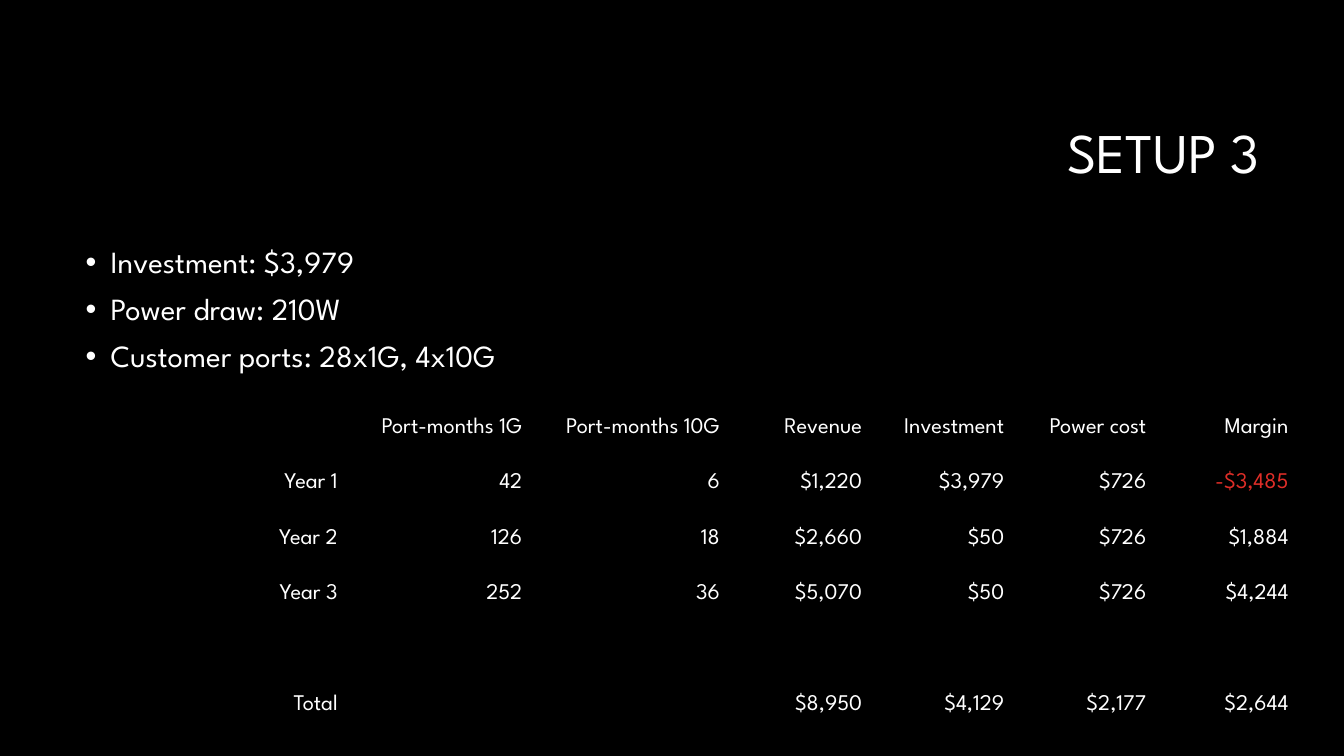
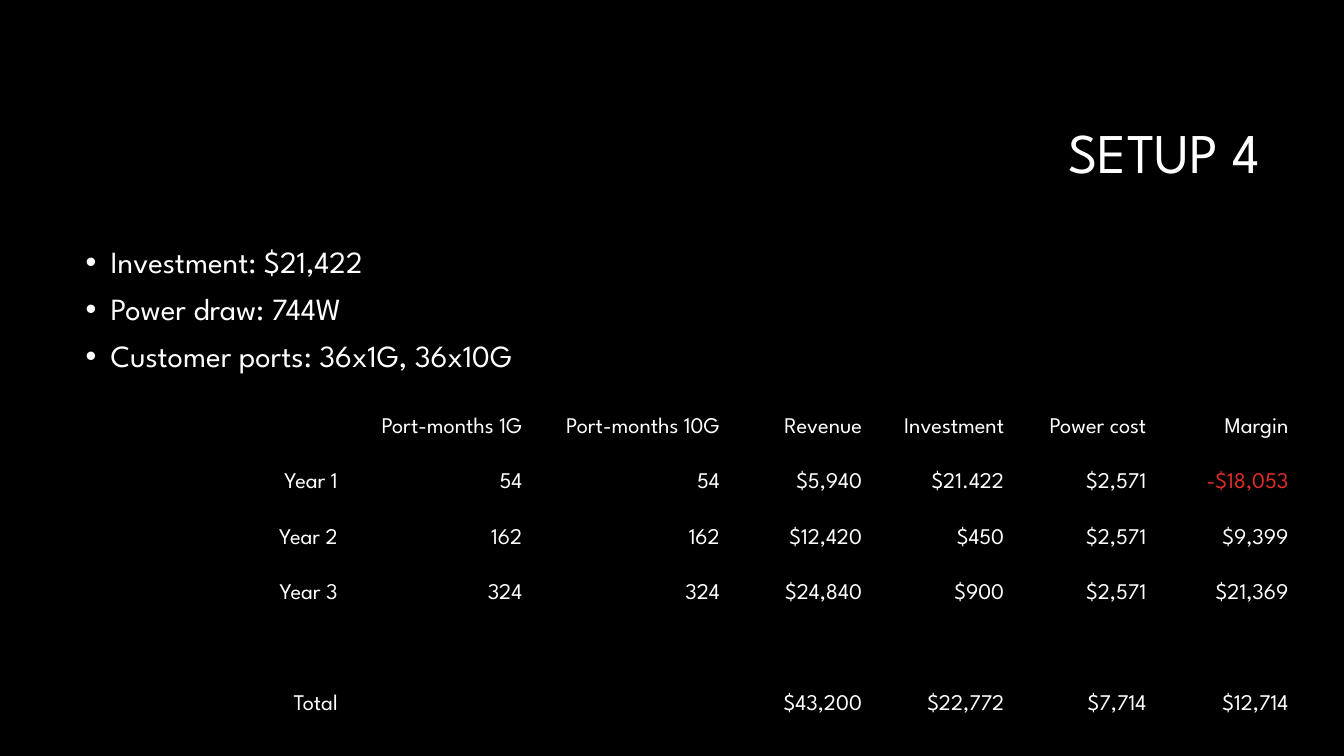
"""Build two slides comparing the finances of network setups 3 and 4."""
from lxml.etree import SubElement
from pptx import Presentation
from pptx.dml.color import RGBColor
from pptx.enum.text import MSO_ANCHOR, PP_ALIGN
from pptx.oxml.ns import qn
from pptx.util import Inches, Pt

BLACK = RGBColor(0x00, 0x00, 0x00)
WHITE = RGBColor(0xFF, 0xFF, 0xFF)
RED = RGBColor(0xDF, 0x2E, 0x28)
FONT = "League Spartan"
PLAIN_TABLE_STYLE = "{2D5ABB26-0587-4C30-8999-92F81FD0307C}"

COLUMN_WIDTHS = [1.93, 1.83, 1.96, 1.41, 1.41, 1.41, 1.41]
ROW_HEIGHTS = [1.02] + [0.55] * 5
HEADINGS = ["", "Port-months 1G", "Port-months 10G", "Revenue",
            "Investment", "Power cost", "Margin"]

SETUPS = [
    {
        "title": "SETUP 3",
        "facts": ["Investment: $3,979", "Power draw: 210W",
                  "Customer ports: 28x1G, 4x10G"],
        "years": [
            ["Year 1", "42", "6", "$1,220", "$3,979", "$726", "-$3,485"],
            ["Year 2", "126", "18", "$2,660", "$50", "$726", "$1,884"],
            ["Year 3", "252", "36", "$5,070", "$50", "$726", "$4,244"],
        ],
        "total": ["Total", "", "", "$8,950", "$4,129", "$2,177", "$2,644"],
    },
    {
        "title": "SETUP 4",
        "facts": ["Investment: $21,422", "Power draw: 744W",
                  "Customer ports: 36x1G, 36x10G"],
        "years": [
            ["Year 1", "54", "54", "$5,940", "$21.422", "$2,571", "-$18,053"],
            ["Year 2", "162", "162", "$12,420", "$450", "$2,571", "$9,399"],
            ["Year 3", "324", "324", "$24,840", "$900", "$2,571", "$21,369"],
        ],
        "total": ["Total", "", "", "$43,200", "$22,772", "$7,714", "$12,714"],
    },
]


def format_runs(paragraph, size, color=WHITE):
    """Apply the shared typeface with a size and colour."""
    for run in paragraph.runs:
        run.font.name = FONT
        run.font.size = Pt(size)
        run.font.color.rgb = color


def add_text_frame(slide, left, top, width, height):
    """Add a wrapping text box and return its text frame."""
    shape = slide.shapes.add_textbox(
        Inches(left), Inches(top), Inches(width), Inches(height))
    shape.text_frame.word_wrap = True
    return shape.text_frame


def add_title(slide, title):
    """Add the right-aligned slide title."""
    text_frame = add_text_frame(slide, 3.17, 0.84, 9.42, 1.41)
    text_frame.vertical_anchor = MSO_ANCHOR.MIDDLE
    text_frame.text = title
    paragraph = text_frame.paragraphs[0]
    paragraph.alignment = PP_ALIGN.RIGHT
    paragraph.line_spacing = 0.9
    format_runs(paragraph, 40)


def add_bullet(paragraph):
    """Give a paragraph a round bullet with a hanging indent."""
    properties = paragraph._p.get_or_add_pPr()
    properties.set("marL", str(Inches(0.25)))
    properties.set("indent", str(Inches(-0.25)))
    SubElement(properties, qn("a:buFont")).set("typeface", "Arial")
    SubElement(properties, qn("a:buChar")).set("char", "•")


def add_facts(slide, facts):
    """Add the bulleted key facts."""
    text_frame = add_text_frame(slide, 0.75, 2.4, 11.83, 1.59)
    text_frame.text = "\n".join(facts)
    for index, paragraph in enumerate(text_frame.paragraphs):
        add_bullet(paragraph)
        paragraph.line_spacing = 0.9
        if index:
            paragraph.space_before = Pt(10)
        format_runs(paragraph, 22)


def fill_cell(cell, text):
    """Write one right-aligned cell, with negative amounts in red."""
    cell.fill.background()
    cell.vertical_anchor = MSO_ANCHOR.BOTTOM
    cell.margin_left = cell.margin_right = cell.margin_top = Inches(0.01)
    cell.margin_bottom = 0
    cell.text_frame.text = text
    paragraph = cell.text_frame.paragraphs[0]
    paragraph.alignment = PP_ALIGN.RIGHT
    format_runs(paragraph, 16, RED if text.startswith("-") else WHITE)


def add_finance_table(slide, rows):
    """Add the yearly finance table without bands or borders."""
    frame = slide.shapes.add_table(
        len(rows), len(COLUMN_WIDTHS), Inches(1.43), Inches(3.33),
        Inches(sum(COLUMN_WIDTHS)), Inches(sum(ROW_HEIGHTS)))
    table = frame.table
    table.first_row = table.horz_banding = False
    for style in table._tbl.iter(qn("a:tableStyleId")):
        style.text = PLAIN_TABLE_STYLE
    for column, width in zip(table.columns, COLUMN_WIDTHS):
        column.width = Inches(width)
    for table_row, height, texts in zip(table.rows, ROW_HEIGHTS, rows):
        table_row.height = Inches(height)
        for cell, text in zip(table_row.cells, texts):
            fill_cell(cell, text)


def add_setup_slide(presentation, setup):
    """Add one black slide that describes a setup."""
    slide = presentation.slides.add_slide(presentation.slide_layouts[6])
    slide.background.fill.solid()
    slide.background.fill.fore_color.rgb = BLACK
    add_title(slide, setup["title"])
    add_facts(slide, setup["facts"])
    spacer = [""] * len(HEADINGS)
    add_finance_table(
        slide, [HEADINGS, *setup["years"], spacer, setup["total"]])


def main():
    """Create and save the presentation."""
    presentation = Presentation()
    presentation.slide_width = Inches(13.33)
    presentation.slide_height = Inches(7.5)
    for setup in SETUPS:
        add_setup_slide(presentation, setup)
    presentation.save("out.pptx")


if __name__ == "__main__":
    main()
